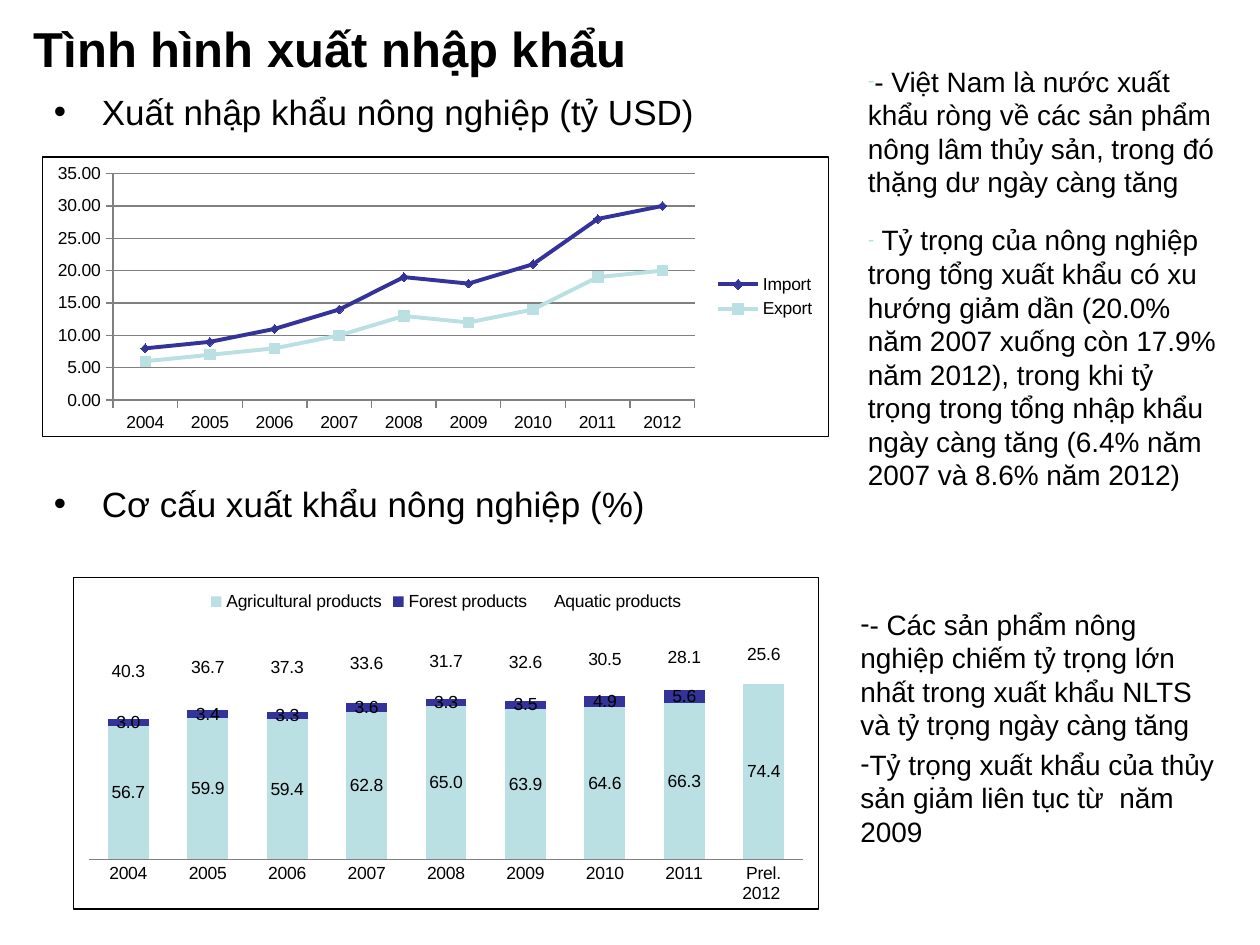
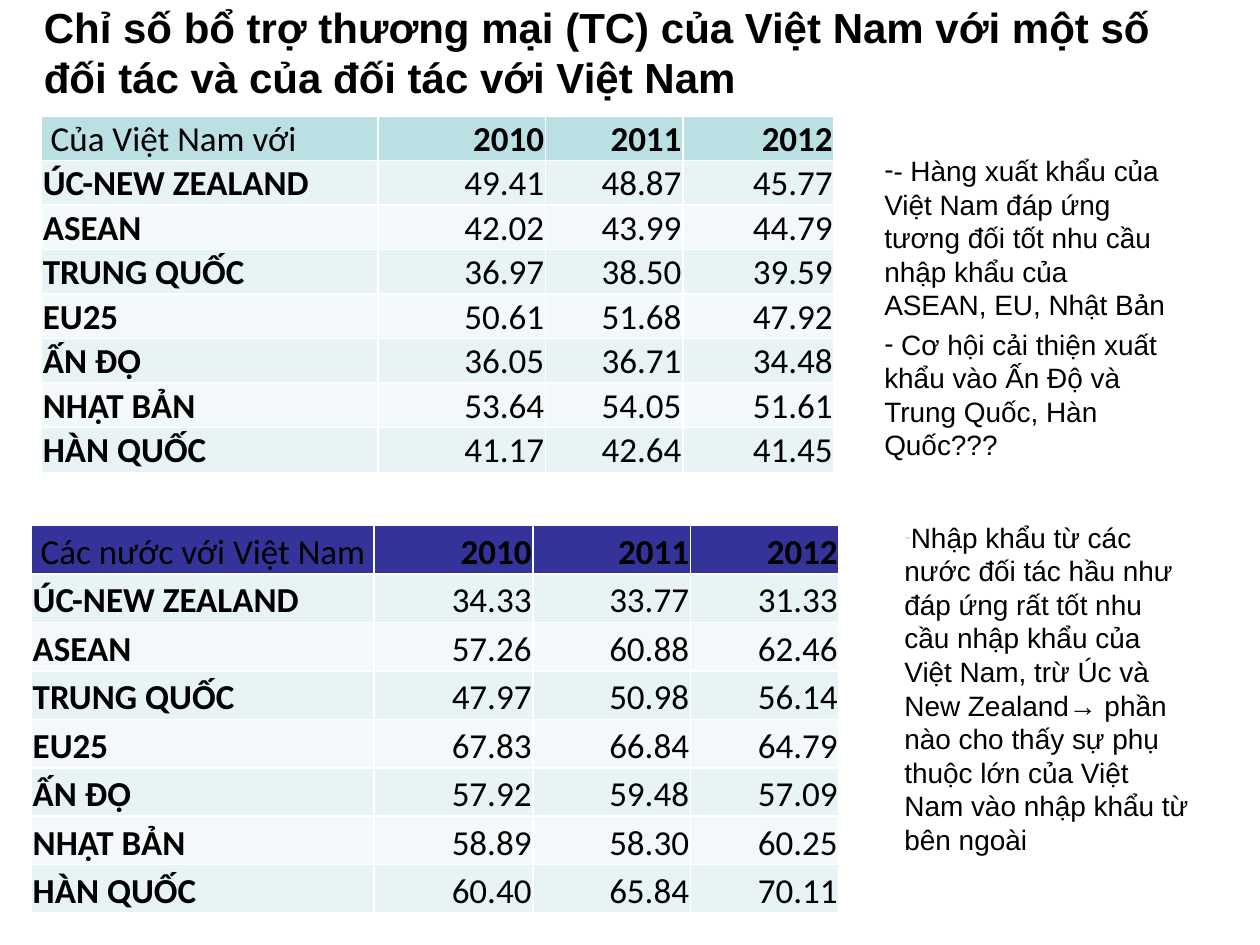
from lxml import etree
from pptx import Presentation
from pptx import util as u
from pptx.chart import data as d
from pptx.dml import color as col
from pptx.enum import chart as c
from pptx.enum import text as t
from pptx.oxml import ns

COLORS = {
    "ink": "000000", "paper": "FFFFFF", "aqua": "BBE0E3", "navy": "333399",
    "grid": "808080", "band_dark": "E7F3F4", "band_light": "F3F9FA",
}
BODY = {"space_before": u.Pt(3.2)}
COMMENT = {"space_before": u.Pt(4), "space_after": u.Pt(10)}
PALE_DASH = {"color": "aqua", "percent": 70}


def rgb(name):
    return col.RGBColor.from_string(COLORS[name])


def apply(target, formats):
    for name, value in formats.items():
        setattr(target, name, value)


def sub(parent, tag, **attributes):
    return etree.SubElement(parent, ns.qn(tag), attributes)


class Deck:
    def __init__(self):
        self.deck = Presentation()
        apply(self.deck, {"slide_width": u.Inches(10), "slide_height": u.Inches(7.5)})
        self.page = None

    def new_page(self):
        self.page = self.deck.slides.add_slide(self.deck.slide_layouts[6])

    def style_font(self, font, size, name="Arial", bold=False):
        apply(font, {"size": u.Pt(size), "name": name, "bold": bold})
        font.color.rgb = rgb("ink")

    def bullet(self, para, char, indent=0, color=None, percent=None):
        properties = para._p.get_or_add_pPr()
        properties.set("marL", str(u.Inches(indent)))
        properties.set("indent", str(-u.Inches(indent)))
        if color:
            sub(sub(properties, "a:buClr"), "a:srgbClr", val=COLORS[color])
        if percent:
            sub(properties, "a:buSzPct", val=str(percent * 1000))
        sub(properties, "a:buFont", typeface="Arial")
        sub(properties, "a:buChar", char=char)

    def text(self, place, lines, size, bold=False, anchor=t.MSO_ANCHOR.TOP,
             spacing=None, bullet=None):
        box = self.page.shapes.add_textbox(*map(u.Inches, place))
        frame = box.text_frame
        apply(frame, {"word_wrap": True, "vertical_anchor": anchor})
        for index, line in enumerate(lines):
            para = frame.paragraphs[0] if index == 0 else frame.add_paragraph()
            apply(para, spacing or {})
            if bullet:
                self.bullet(para, **bullet)
            span = para.add_run()
            span.text = line
            self.style_font(span.font, size, bold=bold)

    def title(self, place, line, size):
        self.text(place, [line], size, bold=True, anchor=t.MSO_ANCHOR.BOTTOM)

    def notes(self, place, lines, spacing, **dash):
        self.text(place, lines, 16, spacing=spacing, bullet={"char": "-", **dash})

    def border(self, cell):
        properties = cell._tc.get_or_add_tcPr()
        for index, tag in enumerate(("a:lnL", "a:lnR", "a:lnT", "a:lnB")):
            line = etree.Element(ns.qn(tag), w=str(u.Pt(1)))
            sub(sub(line, "a:solidFill"), "a:srgbClr", val=COLORS["paper"])
            properties.insert(index, line)

    def table(self, place, widths, header_fill, rows):
        shape = self.page.shapes.add_table(len(rows), len(widths), *map(u.Inches, place))
        table = shape.table
        for column, width in zip(table.columns, widths):
            column.width = u.Inches(width)
        margin = u.Inches(0.01)
        for i, row in enumerate(rows):
            table.rows[i].height = u.Inches(place[3] / len(rows))
            fill = header_fill if i == 0 else ("band_light", "band_dark")[i % 2]
            for j, value in enumerate(row):
                cell = table.cell(i, j)
                apply(cell, {"margin_left": margin, "margin_right": margin,
                             "margin_top": margin, "margin_bottom": 0,
                             "vertical_anchor": t.MSO_ANCHOR.BOTTOM})
                cell.fill.solid()
                cell.fill.fore_color.rgb = rgb(fill)
                self.border(cell)
                para = cell.text_frame.paragraphs[0]
                para.alignment = t.PP_ALIGN.RIGHT if j else t.PP_ALIGN.LEFT
                span = para.add_run()
                span.text = value
                self.style_font(span.font, 20, "Calibri", bold=(i == 0) != (j == 0))

    def chart(self, kind, place, categories, series, number_format, legend, plot_area):
        chart_data = d.CategoryChartData(number_format=number_format)
        chart_data.categories = categories
        for name, values in series.items():
            chart_data.add_series(name, values)
        chart = self.page.shapes.add_chart(kind, *map(u.Inches, place), chart_data).chart
        apply(chart, {"has_title": False, "has_legend": True})
        apply(chart.legend, {"position": legend, "include_in_layout": False})
        self.style_font(chart.font, 10)
        chart.plots[0].vary_by_categories = False
        chart.category_axis.format.line.color.rgb = rgb("grid")
        apply(chart.value_axis.tick_labels,
              {"number_format": number_format, "number_format_is_linked": False})

        frame = etree.Element(ns.qn("c:spPr"))
        sub(frame, "a:noFill")
        outline = sub(frame, "a:ln", w=str(u.Pt(0.75)))
        sub(sub(outline, "a:solidFill"), "a:srgbClr", val=COLORS["ink"])
        space = chart._chartSpace
        space.find(ns.qn("c:chart")).addnext(frame)

        plot = space.find(".//" + ns.qn("c:plotArea"))
        for old in plot.findall(ns.qn("c:layout")):
            plot.remove(old)
        layout = etree.Element(ns.qn("c:layout"))
        manual = sub(layout, "c:manualLayout")
        sub(manual, "c:layoutTarget", val="inner")
        for side in "xy":
            sub(manual, f"c:{side}Mode", val="edge")
        for side, share in zip("xywh", plot_area):
            sub(manual, f"c:{side}", val=str(share))
        plot.insert(0, layout)
        return chart

    def line_chart(self, place, categories, series, markers, **options):
        chart = self.chart(c.XL_CHART_TYPE.LINE_MARKERS_STACKED, place, categories,
                           series, "0.00", c.XL_LEGEND_POSITION.RIGHT, **options)
        value_axis = chart.value_axis
        apply(value_axis, {"has_major_gridlines": True, "minimum_scale": 0,
                           "maximum_scale": 35, "major_unit": 5})
        for line in (value_axis.format.line, value_axis.major_gridlines.format.line):
            line.color.rgb = rgb("grid")
        for item, (color, style, size) in zip(chart.plots[0].series, markers):
            item.smooth = False
            item.format.line.color.rgb = rgb(color)
            item.format.line.width = u.Pt(2.25)
            apply(item.marker, {"style": style, "size": size})
            item.marker.format.fill.solid()
            item.marker.format.fill.fore_color.rgb = rgb(color)
            item.marker.format.line.color.rgb = rgb(color)

    def share_chart(self, place, categories, series, colors, **options):
        chart = self.chart(c.XL_CHART_TYPE.COLUMN_STACKED_100, place, categories,
                           series, "0.0", c.XL_LEGEND_POSITION.TOP, **options)
        apply(chart.value_axis, {"visible": False, "has_major_gridlines": False})
        chart.category_axis.major_tick_mark = c.XL_TICK_MARK.NONE
        apply(chart.plots[0], {"gap_width": 95, "overlap": 100})
        for item, color in zip(chart.plots[0].series, colors):
            item.format.fill.solid()
            item.format.fill.fore_color.rgb = rgb(color)
            labels = item.data_labels
            apply(labels, {"show_value": True, "number_format": "0.0",
                           "number_format_is_linked": False})
            self.style_font(labels.font, 10)


def trade_page(deck):
    deck.new_page()
    deck.title((0.17, 0.16, 6.9, 0.5), "Tình hình xuất nhập khẩu", 28)
    deck.notes((6.73, 4.77, 3.07, 2.48), [
        "- Các sản phẩm nông nghiệp chiếm tỷ trọng lớn nhất trong xuất khẩu NLTS và tỷ trọng ngày càng tăng",
        "Tỷ trọng xuất khẩu của thủy sản giảm liên tục từ  năm 2009",
    ], BODY)
    deck.text((0.33, 0.67, 6.5, 6.55), [
        "Xuất nhập khẩu nông nghiệp (tỷ USD)",
        "Cơ cấu xuất khẩu nông nghiệp (%)",
    ], 20, spacing={"space_before": u.Pt(200)}, bullet={"char": "•", "indent": 0.38})
    years = [str(year) for year in range(2004, 2013)]
    deck.line_chart(
        (0.33, 1.24, 6.25, 2.23), years,
        {"Export": (6, 7, 8, 10, 13, 12, 14, 19, 20),
         "Import": (2, 2, 3, 4, 6, 6, 7, 9, 10)},
        [("aqua", c.XL_MARKER_STYLE.SQUARE, 6), ("navy", c.XL_MARKER_STYLE.DIAMOND, 5)],
        plot_area=(0.09, 0.06, 0.74, 0.81))
    deck.share_chart(
        (0.58, 4.58, 5.92, 2.64), years[:-1] + ["Prel. 2012 "],
        {"Agricultural products": (56.7, 59.9, 59.4, 62.8, 65, 63.9, 64.6, 66.3, 74.4),
         "Forest products": (3, 3.4, 3.3, 3.6, 3.3, 3.5, 4.9, 5.6, None),
         "Aquatic products": (40.3, 36.7, 37.3, 33.6, 31.7, 32.6, 30.5, 28.1, 25.6)},
        ("aqua", "navy", "paper"), plot_area=(0.02, 0.14, 0.96, 0.71))
    deck.notes((6.79, 0.46, 3.01, 3.6), [
        "- Việt Nam là nước xuất khẩu ròng về các sản phẩm nông lâm thủy sản, trong đó thặng dư ngày càng tăng",
        " Tỷ trọng của nông nghiệp trong tổng xuất khẩu có xu hướng giảm dần (20.0% năm 2007 xuống còn 17.9% "
        "năm 2012), trong khi tỷ trọng trong tổng nhập khẩu ngày càng tăng (6.4% năm 2007 và 8.6% năm 2012)",
    ], COMMENT, **PALE_DASH)


def index_rows(heading, values):
    partners = ("ÚC-NEW ZEALAND", "ASEAN", "TRUNG QUỐC", "EU25", "ẤN ĐỘ", "NHẬT BẢN", "HÀN QUỐC")
    header = (heading, "2010", "2011", "2012")
    return [header] + [(partner, *(f"{value:.2f}" for value in row))
                       for partner, row in zip(partners, values)]


def complementarity_page(deck):
    deck.new_page()
    deck.title((0.25, 0.36, 9.47, 0.5),
               "Chỉ số bổ trợ thương mại (TC) của Việt Nam với một số đối tác và của đối tác với Việt Nam", 24)
    deck.notes((6.92, 1.17, 2.5, 2.42), [
        "- Hàng xuất khẩu của Việt Nam đáp ứng tương đối tốt nhu cầu nhập khẩu của ASEAN, EU, Nhật Bản",
        " Cơ hội cải thiện xuất khẩu vào Ấn Độ và Trung Quốc, Hàn Quốc???",
    ], BODY)
    deck.table((0.33, 0.92, 6.29, 2.83), (2.67, 1.33, 1.09, 1.2), "aqua", index_rows(
        " Của Việt Nam với", [
            (49.41, 48.87, 45.77), (42.02, 43.99, 44.79), (36.97, 38.50, 39.59),
            (50.61, 51.68, 47.92), (36.05, 36.71, 34.48), (53.64, 54.05, 51.61),
            (41.17, 42.64, 41.45)]))
    deck.table((0.25, 4.17, 6.41, 3.08), (2.72, 1.26, 1.25, 1.18), "navy", index_rows(
        " Các nước với Việt Nam", [
            (34.33, 33.77, 31.33), (57.26, 60.88, 62.46), (47.97, 50.98, 56.14),
            (67.83, 66.84, 64.79), (57.92, 59.48, 57.09), (58.89, 58.30, 60.25),
            (60.40, 65.84, 70.11)]))
    deck.notes((7.08, 4.08, 2.5, 2.7), [
        "Nhập khẩu từ các nước đối tác hầu như đáp ứng rất tốt nhu cầu nhập khẩu của Việt Nam, trừ Úc và "
        "New Zealand→ phần nào cho thấy sự phụ thuộc lớn của Việt Nam vào nhập khẩu từ bên ngoài",
    ], COMMENT, **PALE_DASH)


def main():
    deck = Deck()
    trade_page(deck)
    complementarity_page(deck)
    deck.deck.save("out.pptx")


if __name__ == "__main__":
    main()
